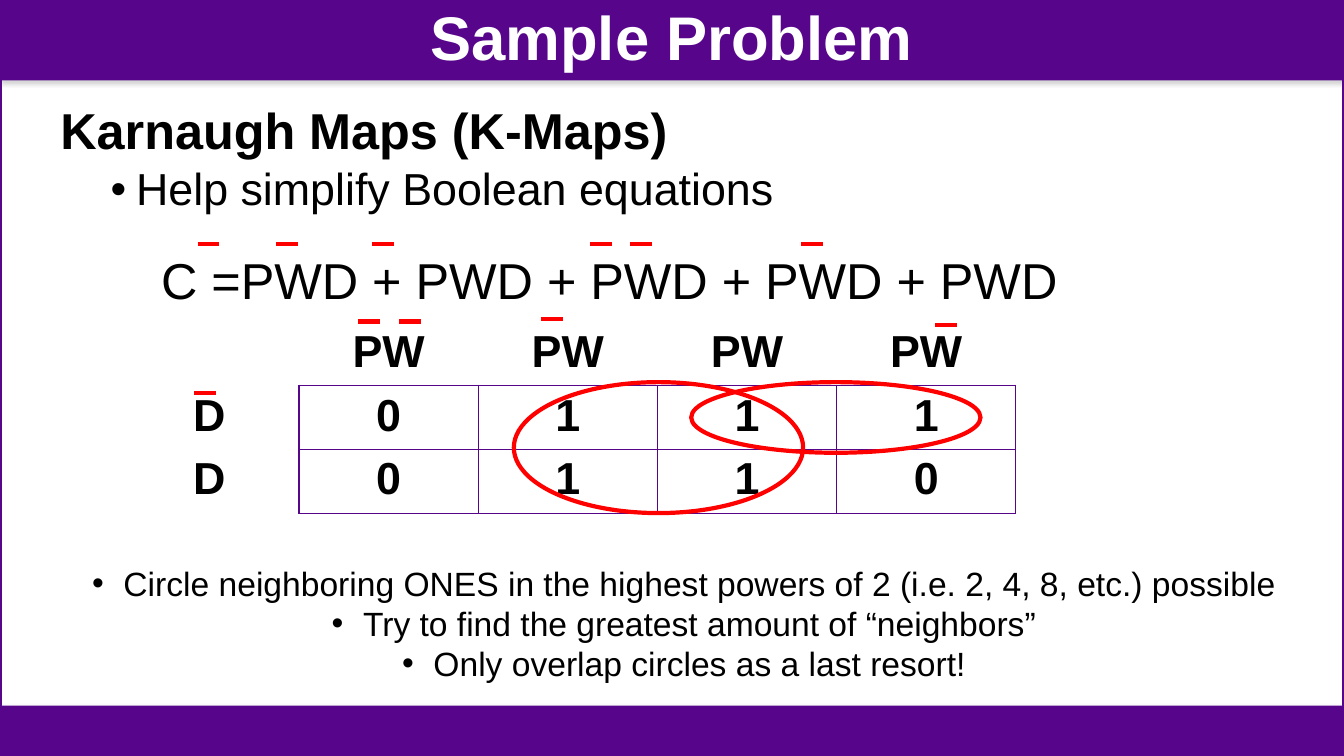
from lxml.etree import SubElement
from pptx import Presentation
from pptx.dml.color import RGBColor
from pptx.enum.shapes import MSO_CONNECTOR, MSO_SHAPE
from pptx.enum.text import MSO_ANCHOR, PP_ALIGN
from pptx.oxml.ns import qn
from pptx.util import Cm, Pt

PURPLE = RGBColor(0x57, 0x06, 0x8C)
RED = RGBColor(0xFF, 0x00, 0x00)
BLACK = RGBColor(0x00, 0x00, 0x00)
WHITE = RGBColor(0xFF, 0xFF, 0xFF)
GREY = RGBColor(0x80, 0x80, 0x80)

W, H = 33.87, 19.05
BAR_LENGTH = 0.55

KMAP = [
    ["", "PW", "PW", "PW", "PW"],
    ["D", "0", "1", "1", "1"],
    ["D", "0", "1", "1", "0"],
]
KMAP_BARS = [(6.0, 0), (7.04, 0), (10.62, -0.07), (20.55, 0.08), (1.88, 1.81)]
KMAP_CIRCLES = [(9.93, 1.53, 7.29, 3.3), (14.4, 1.53, 7.29, 1.78)]
EQUATION_BARS = [4.98, 6.96, 9.37, 14.88, 15.88, 20.19]
RULES = [
    "Circle neighboring ONES in the highest powers of 2 (i.e. 2, 4, 8, etc.) possible",
    "Try to find the greatest amount of “neighbors”",
    "Only overlap circles as a last resort!",
]


def cms(box):
    return [Cm(v) for v in box]


def add_outline(s, kind, box, color, weight):
    sp = s.shapes.add_shape(kind, *cms(box))
    sp.shadow.inherit = False
    sp.fill.background()
    sp.line.color.rgb = color
    sp.line.width = Pt(weight)


def add_band(s, box):
    """Purple band with a soft shadow below it."""
    sp = s.shapes.add_shape(MSO_SHAPE.RECTANGLE, *cms(box))
    sp.shadow.inherit = False
    sp.fill.solid()
    sp.fill.fore_color.rgb = PURPLE
    sp.line.fill.background()
    effects = sp._element.spPr.find(qn("a:effectLst"))
    shadow = SubElement(effects, qn("a:outerShdw"), blurRad=str(Pt(3.1)),
                        dist=str(Pt(1.8)), dir="5400000", rotWithShape="0")
    color = SubElement(shadow, qn("a:srgbClr"), val=str(GREY))
    SubElement(color, qn("a:alpha"), val="35000")


def add_overbar(s, x, y):
    line = s.shapes.add_connector(MSO_CONNECTOR.STRAIGHT,
                                  *cms((x, y, x + BAR_LENGTH, y)))
    line.line.color.rgb = RED
    line.line.width = Pt(3)
    SubElement(line._element.spPr, qn("a:effectLst"))


def add_textbox(s, box, anchor=MSO_ANCHOR.TOP):
    tf = s.shapes.add_textbox(*cms(box)).text_frame
    tf.word_wrap = True
    tf.vertical_anchor = anchor
    return tf


def write(p, text, size, color=BLACK, bold=False, margin=0, hang=0, **layout):
    """Fill a paragraph; a hanging indent also gives it a bullet."""
    pPr = p._p.get_or_add_pPr()
    pPr.set("marL", str(Cm(margin)))
    pPr.set("indent", str(-Cm(hang)))
    if hang:
        SubElement(pPr, qn("a:buFont"), typeface="Arial")
        SubElement(pPr, qn("a:buChar"), char="•")
    for name, value in layout.items():
        setattr(p, name, value)
    r = p.add_run()
    r.text = text
    r.font.color.rgb = color
    for name, value in {"name": "Arial", "size": Pt(size), "bold": bold}.items():
        setattr(r.font, name, value)


def add_title(s, box):
    tf = add_textbox(s, box, MSO_ANCHOR.MIDDLE)
    write(tf.paragraphs[0], "Sample Problem", 44, WHITE, True,
          alignment=PP_ALIGN.CENTER, line_spacing=0.9)


def add_introduction(s, box):
    """Heading, bullet and equation with its negation bars."""
    tf = add_textbox(s, box)
    write(tf.paragraphs[0], "Karnaugh Maps (K-Maps)", 36, bold=True,
          margin=1.27, line_spacing=0.9)
    write(tf.add_paragraph(), "Help simplify Boolean equations", 32,
          margin=3.18, hang=0.64, line_spacing=0.9, space_before=Pt(5))
    write(tf.add_paragraph(), "C =PWD + PWD + PWD + PWD + PWD", 36,
          margin=3.81, line_spacing=0.9, space_before=Pt(29))
    for x in EQUATION_BARS:
        add_overbar(s, box[0] + x, box[1] + 3.61)


def set_borders(cell, sides):
    tcPr = cell._tc.get_or_add_tcPr()
    for side in ("L", "R", "T", "B"):
        if side in sides:
            ln = SubElement(tcPr, qn(f"a:ln{side}"), w=str(Pt(1)))
            fill = SubElement(ln, qn("a:solidFill"))
            SubElement(fill, qn("a:srgbClr"), val=str(PURPLE))


def add_kmap(s, box):
    left, top, width, height = box
    rows, cols = len(KMAP), len(KMAP[0])
    table = s.shapes.add_table(rows, cols, *cms(box)).table
    table.first_row = table.horz_banding = False
    for column in table.columns:
        column.width = Cm(width / cols)
    for i, values in enumerate(KMAP):
        table.rows[i].height = Cm(height / rows)
        for j, value in enumerate(values):
            cell = table.cell(i, j)
            if i and j:
                set_borders(cell, "LRTB")
            elif i or j:
                set_borders(cell, "R" if i else "B")
            cell.fill.background()
            if value:
                write(cell.text_frame.paragraphs[0], value, 32, bold=True,
                      alignment=PP_ALIGN.CENTER)
    for x, y in KMAP_BARS:
        add_overbar(s, left + x, top + y)
    for x, y, w, h in KMAP_CIRCLES:
        add_outline(s, MSO_SHAPE.OVAL, (left + x, top + y, w, h), RED, 3)


def add_rules(s, box):
    tf = add_textbox(s, box)
    for i, rule in enumerate(RULES):
        p = tf.add_paragraph() if i else tf.paragraphs[0]
        write(p, rule, 24, margin=0.79, hang=0.79, alignment=PP_ALIGN.CENTER)


def main():
    prs = Presentation()
    prs.slide_width, prs.slide_height = Cm(W), Cm(H)
    s = prs.slides.add_slide(prs.slide_layouts[6])
    header = (0, 0, W, 2.03)
    add_band(s, header)
    add_outline(s, MSO_SHAPE.RECTANGLE, (0, 0, W, H), PURPLE, 2.25)
    add_band(s, (0, H - 1.27, W, 1.27))
    add_title(s, header)
    add_introduction(s, (0, 2.54, W, 5.4))
    add_kmap(s, (3.02, 8.1, 22.58, 4.56))
    add_rules(s, (1.45, 14.05, 31.57, 3.33))
    prs.save("out.pptx")


if __name__ == "__main__":
    main()
